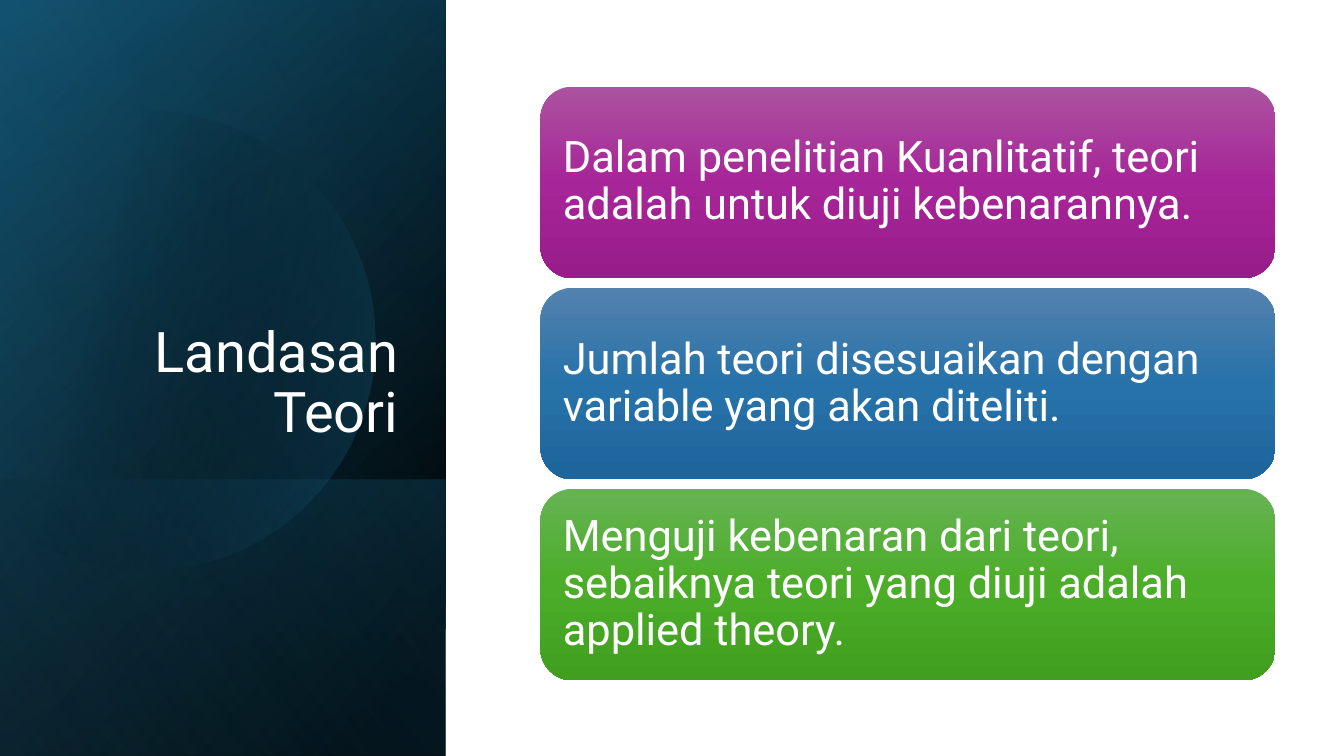
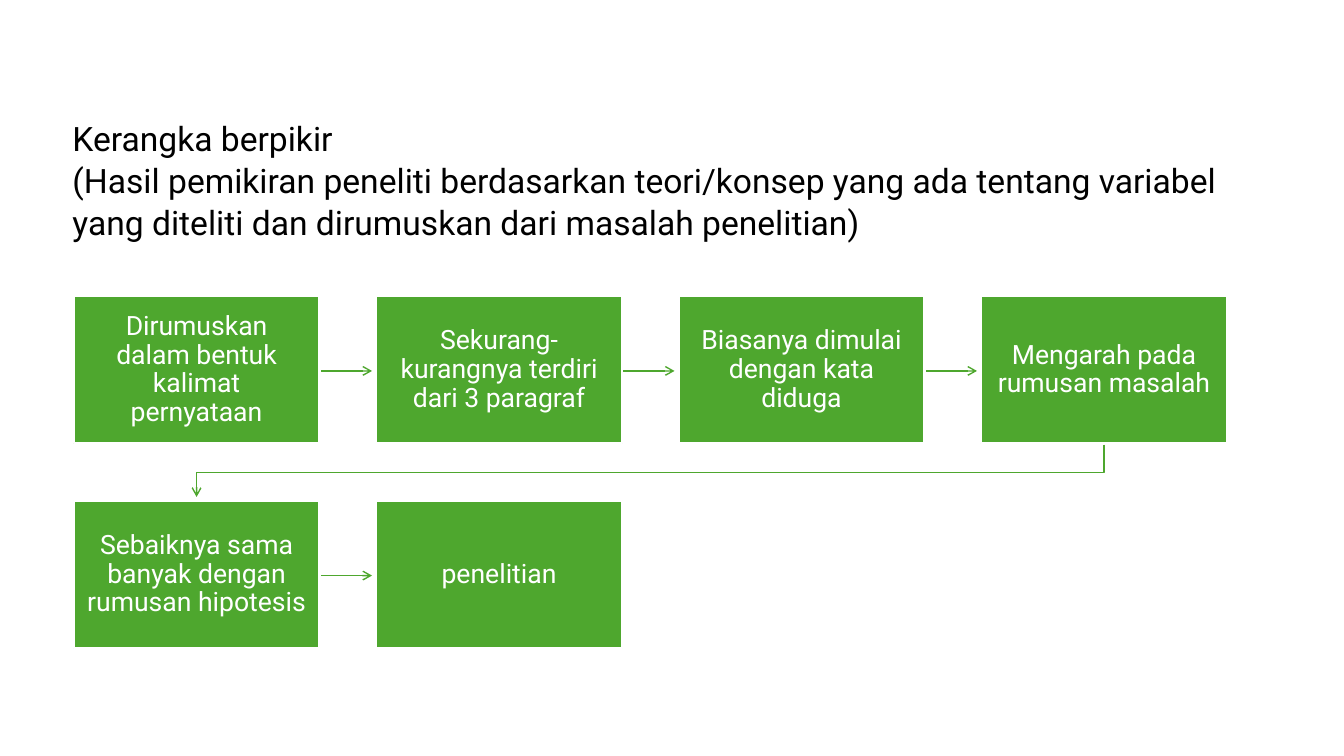
import dataclasses
import math
from typing import Any, NamedTuple

import pptx
import pptx.dml.color
import pptx.enum.shapes
import pptx.enum.text
import pptx.oxml
import pptx.oxml.ns
import pptx.util

Inches = pptx.util.Inches
Pt = pptx.util.Pt
SHAPE = pptx.enum.shapes.MSO_SHAPE
ALIGN = pptx.enum.text.PP_ALIGN
ANCHOR = pptx.enum.text.MSO_ANCHOR
qn = pptx.oxml.ns.qn

FONT = "Roboto"
COLORS = {
    "white": "FFFFFF",
    "black": "000000",
    "navy": "104862",
    "teal": "156082",
    "sky": "46B1E1",
    "green": "4EA72E",
}


class Stop(NamedTuple):
    position: int
    color: str
    alpha: int = 100


class Box(NamedTuple):
    left: float
    top: float
    width: float
    height: float


@dataclasses.dataclass(frozen=True)
class PanelLayer:
    box: Box
    stops: list[Stop]
    angle: float


@dataclasses.dataclass(frozen=True)
class TextStyle:
    size: float
    color: str = "white"
    align: Any = ALIGN.LEFT
    anchor: Any = ANCHOR.MIDDLE
    spacing: float = 0.9
    inset_x: float = 0.1
    inset_y: float = 0.05


@dataclasses.dataclass(frozen=True)
class Card:
    message: str
    shades: tuple[str, str, str]


PANEL = Box(0, 0, 4.42, 7.5)
PANEL_BASE = [
    PanelLayer(PANEL, [Stop(8, COLORS["black"]), Stop(100, COLORS["navy"])], 220),
    PanelLayer(PANEL, [Stop(0, COLORS["black"], 0), Stop(99, COLORS["teal"], 46)], 240),
    PanelLayer(Box(0, 4.76, 4.42, 2.74),
               [Stop(2, COLORS["teal"], 29), Stop(100, COLORS["black"], 30)], 140),
]
PANEL_GLOW = PanelLayer(
    PANEL, [Stop(0, COLORS["black"], 0), Stop(99, COLORS["sky"], 11)], 150)
DISC_STOPS = [Stop(29, COLORS["black"], 0), Stop(100, COLORS["teal"], 43)]

SIDE_TITLE = TextStyle(40, align=ALIGN.RIGHT, anchor=ANCHOR.BOTTOM)
TOP_TITLE = TextStyle(24, color="black", spacing=1.04)
CARD_TEXT = TextStyle(31, inset_x=0.13, inset_y=0.13)
STEP_TEXT = TextStyle(19, align=ALIGN.CENTER, inset_x=0.12, inset_y=0.13)

CARDS = [
    Card("Dalam penelitian Kuanlitatif, teori adalah untuk diuji kebenarannya.",
         ("AC53A0", "A62598", "991C8B")),
    Card("Jumlah teori disesuaikan dengan variable yang akan diteliti.",
         ("5382AF", "2772A9", "1D669C")),
    Card("Menguji kebenaran dari teori, sebaiknya teori yang diuji adalah applied theory.",
         ("66B354", "4BAD28", "409F1E")),
]
FIRST_CARD = Box(5.36, 0.86, 7.29, 1.9)
CARD_PITCH = 1.995

STEPS = [
    "Dirumuskan dalam bentuk kalimat pernyataan",
    "Sekurang-kurangnya terdiri dari 3 paragraf",
    "Biasanya dimulai dengan kata diduga",
    "Mengarah pada rumusan masalah",
    "Sebaiknya sama banyak dengan rumusan hipotesis",
    "penelitian",
]
COLUMNS = 4
FIRST_STEP = Box(0.73, 2.94, 2.44, 1.46)
STEP_PITCH_X = 3.0
STEP_PITCH_Y = 2.03


def rgb(name: str) -> pptx.dml.color.RGBColor:
    return pptx.dml.color.RGBColor.from_string(COLORS[name])


def apply_format(target: Any, values: dict[str, Any]) -> None:
    for attribute, value in values.items():
        setattr(target, attribute, value)


def write(holder: Any, message: str, style: TextStyle) -> None:
    frame = holder.text_frame
    frame.text = message
    apply_format(frame, {
        "word_wrap": True,
        "vertical_anchor": style.anchor,
        "margin_left": Inches(style.inset_x),
        "margin_right": Inches(style.inset_x),
        "margin_top": Inches(style.inset_y),
        "margin_bottom": Inches(style.inset_y),
    })
    for paragraph in frame.paragraphs:
        apply_format(paragraph, {"alignment": style.align, "line_spacing": style.spacing})
        for run in paragraph.runs:
            apply_format(run.font, {"name": FONT, "size": Pt(style.size)})
            run.font.color.rgb = rgb(style.color)


def add_title(slide: Any, box: Box, message: str, style: TextStyle) -> None:
    write(slide.shapes.add_textbox(*map(Inches, box)), message, style)


def add_block(slide: Any, kind: Any, box: Box) -> Any:
    block = slide.shapes.add_shape(kind, *map(Inches, box))
    block.shadow.inherit = False
    return block


def fill_gradient(shape: Any, stops: list[Stop], angle: float) -> None:
    shape.line.fill.background()
    shape.fill.background()
    stop_xml = "".join(
        f'<a:gs pos="{stop.position * 1000}"><a:srgbClr val="{stop.color}">'
        f'<a:alpha val="{stop.alpha * 1000}"/></a:srgbClr></a:gs>'
        for stop in stops)
    gradient = pptx.oxml.parse_xml(
        f'<a:gradFill {pptx.oxml.ns.nsdecls("a")} rotWithShape="1">'
        f'<a:gsLst>{stop_xml}</a:gsLst>'
        f'<a:lin ang="{round(angle * 60000)}" scaled="0"/></a:gradFill>')
    properties = shape.element.spPr
    properties.replace(properties.find(qn("a:noFill")), gradient)


def add_layer(slide: Any, layer: PanelLayer) -> None:
    fill_gradient(add_block(slide, SHAPE.RECTANGLE, layer.box), layer.stops, layer.angle)


def add_outline(slide: Any, points: list[tuple[float, float]], close: bool) -> Any:
    corners = [(Inches(x), Inches(y)) for x, y in points]
    builder = slide.shapes.build_freeform(*corners[0])
    builder.add_line_segments(corners[1:], close=close)
    outline = builder.convert_to_shape()
    outline.shadow.inherit = False
    return outline


def add_disc(slide: Any) -> None:
    center_x, center_y, radius = 1.44, 3.38, 2.28
    reach = math.acos(-center_x / radius)
    segments = 90
    angles = [reach * (2 * i / segments - 1) for i in range(segments + 1)]
    rim = [(center_x + radius * math.cos(a), center_y + radius * math.sin(a))
           for a in angles]
    fill_gradient(add_outline(slide, rim, True), DISC_STOPS, 13.9)


def style_arrow(arrow: Any) -> None:
    arrow.line.color.rgb = rgb("green")
    arrow.line.width = Pt(1)
    properties = arrow.element.spPr
    tip = properties.find(qn("a:ln")).makeelement(qn("a:tailEnd"), {"type": "arrow"})
    properties.find(qn("a:ln")).append(tip)


def add_step_arrow(slide: Any, step: Box) -> None:
    start = step.left + step.width
    middle = step.top + step.height / 2 + 0.01
    arrow = slide.shapes.add_connector(
        pptx.enum.shapes.MSO_CONNECTOR.STRAIGHT,
        *map(Inches, (start, middle, start + 0.52, middle)))
    style_arrow(arrow)
    properties = arrow.element.spPr
    properties.append(properties.makeelement(qn("a:effectLst"), {}))


def add_return_arrow(slide: Any, last: Box, following: Box) -> None:
    start_x = last.left + last.width / 2
    end_x = following.left + following.width / 2
    bottom = last.top + last.height
    turn = bottom + 0.29
    arrow = add_outline(slide, [(start_x, bottom + 0.01), (start_x, turn),
                                (end_x, turn), (end_x, following.top - 0.04)], False)
    arrow.fill.background()
    style_arrow(arrow)


def step_box(index: int) -> Box:
    row, column = divmod(index, COLUMNS)
    return FIRST_STEP._replace(left=FIRST_STEP.left + column * STEP_PITCH_X,
                               top=FIRST_STEP.top + row * STEP_PITCH_Y)


def build_theory(slide: Any) -> None:
    for layer in PANEL_BASE:
        add_layer(slide, layer)
    add_disc(slide)
    add_layer(slide, PANEL_GLOW)
    add_title(slide, Box(0.64, 1.84, 3.41, 2.62), "Landasan Teori", SIDE_TITLE)
    for index, card in enumerate(CARDS):
        box = FIRST_CARD._replace(top=FIRST_CARD.top + index * CARD_PITCH)
        block = add_block(slide, SHAPE.ROUNDED_RECTANGLE, box)
        stops = [Stop(50 * i, shade) for i, shade in enumerate(card.shades)]
        fill_gradient(block, stops, 90)
        write(block, card.message, CARD_TEXT)


def build_framework(slide: Any) -> None:
    add_title(slide, Box(0.62, 1.07, 11.65, 1.41),
              "Kerangka berpikir\v(Hasil pemikiran peneliti berdasarkan teori/konsep yang ada "
              "tentang variabel yang diteliti dan dirumuskan dari masalah penelitian)",
              TOP_TITLE)
    for index, message in enumerate(STEPS):
        box = step_box(index)
        if index + 1 < len(STEPS):
            following = step_box(index + 1)
            if following.top == box.top:
                add_step_arrow(slide, box)
            else:
                add_return_arrow(slide, box, following)
        block = add_block(slide, SHAPE.RECTANGLE, box)
        block.fill.solid()
        block.fill.fore_color.rgb = rgb("green")
        block.line.color.rgb = rgb("white")
        block.line.width = Pt(1.5)
        write(block, message, STEP_TEXT)


def main() -> None:
    deck = pptx.Presentation()
    apply_format(deck, {"slide_width": Inches(13.33), "slide_height": Inches(7.5)})
    for build in (build_theory, build_framework):
        build(deck.slides.add_slide(deck.slide_layouts[6]))
    deck.save("out.pptx")


if __name__ == "__main__":
    main()
